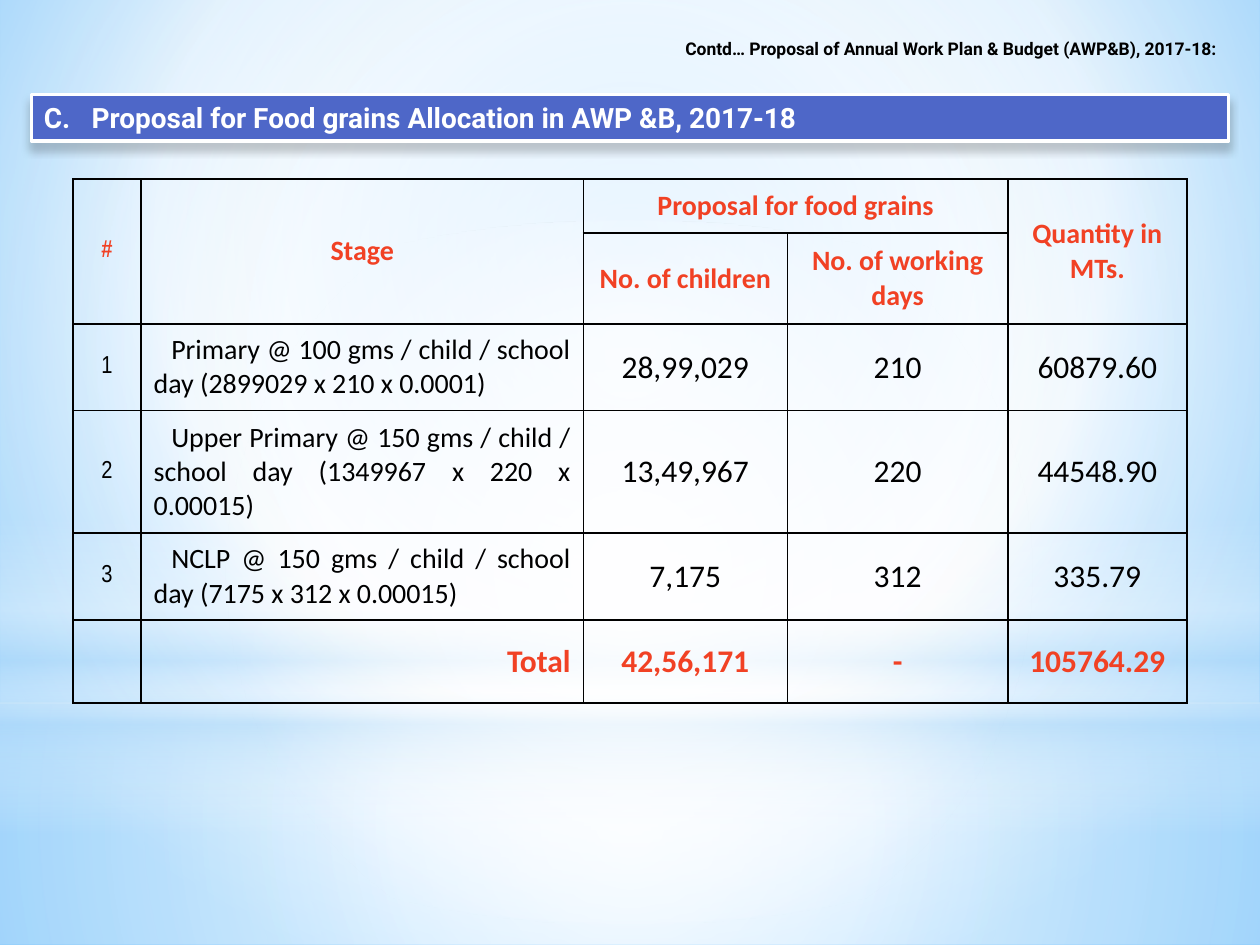
from dataclasses import dataclass

import lxml.etree
import pptx
import pptx.dml.color
import pptx.enum.shapes
import pptx.enum.text
import pptx.oxml.ns
import pptx.util

Inches = pptx.util.Inches
Pt = pptx.util.Pt
RGBColor = pptx.dml.color.RGBColor
Align = pptx.enum.text.PP_ALIGN
Shapes = pptx.enum.shapes.MSO_SHAPE
qn = pptx.oxml.ns.qn

BLACK = RGBColor(0x00, 0x00, 0x00)
WHITE = RGBColor(0xFF, 0xFF, 0xFF)
INDIGO = RGBColor(0x4E, 0x67, 0xC8)
RED = RGBColor(0xF1, 0x41, 0x24)
PALE_BLUE = RGBColor(0xB4, 0xDC, 0xFA)
SKY_BLUE = RGBColor(0x9E, 0xD5, 0xFF)
DEEP_BLUE = RGBColor(0x5B, 0xB9, 0xFF)


@dataclass(frozen=True)
class Stop:
    position: int
    color: RGBColor
    opacity: int = 100


@dataclass(frozen=True)
class Glow:
    shape_type: int
    top: float
    height: float
    stops: tuple
    linear: bool = False


@dataclass(frozen=True)
class TextStyle:
    font: str
    size: int
    color: RGBColor = BLACK
    bold: bool = False
    alignment: int = Align.CENTER
    indent: float = 0


@dataclass(frozen=True)
class Entry:
    row: int
    column: int
    text: str
    style: TextStyle


CONTINUED = TextStyle("Roboto", 10, bold=True, alignment=Align.RIGHT)
HEADING = TextStyle("Roboto", 16, WHITE, True, Align.LEFT)
NUMBER_HEADER = TextStyle("Arial Narrow", 14, RED, True)
HEADER = TextStyle("Calibri", 16, RED, True)
NUMBER = TextStyle("Arial Narrow", 14)
STAGE = TextStyle("Calibri", 16, alignment=Align.JUSTIFY, indent=0.14)
VALUE = TextStyle("Calibri", 18)
TOTAL = TextStyle("Calibri", 18, RED, True)
TOTAL_LABEL = TextStyle("Calibri", 18, RED, True, Align.RIGHT)

CENTER = (50, 50, 50, 50)
BACKGROUND_STOPS = (Stop(0, SKY_BLUE), Stop(60, WHITE), Stop(100, DEEP_BLUE))
GLOWS = (
    Glow(Shapes.RECTANGLE, 5.58, 1.92,
         (Stop(0, WHITE, 91), Stop(37, WHITE, 76), Stop(100, PALE_BLUE, 79))),
    Glow(Shapes.RECTANGLE, 0, 5.58,
         (Stop(0, WHITE, 89), Stop(48, WHITE, 62), Stop(100, PALE_BLUE, 79))),
    Glow(Shapes.RECTANGLE, 4.12, 2.5,
         (Stop(0, WHITE, 0), Stop(29, WHITE, 30), Stop(45, PALE_BLUE, 40),
          Stop(55, WHITE, 26), Stop(65, PALE_BLUE, 60), Stop(100, WHITE, 0)), True),
    Glow(Shapes.OVAL, 1.75, 5.58, (Stop(0, WHITE), Stop(56, WHITE, 0))),
)

COLUMN_WIDTHS = (0.54, 3.51, 1.62, 1.75, 1.42)
ROW_HEIGHTS = (0.43, 0.72, 0.69, 0.97, 0.69, 0.66)
MERGES = ((0, 0, 1, 0), (0, 1, 1, 1), (0, 2, 0, 3), (0, 4, 1, 4))
HEADERS = (
    Entry(0, 0, "#", NUMBER_HEADER),
    Entry(0, 1, "Stage", HEADER),
    Entry(0, 2, "Proposal for food grains", HEADER),
    Entry(0, 4, "Quantity in MTs.", HEADER),
    Entry(1, 2, "No. of children", HEADER),
    Entry(1, 3, "No. of working days", HEADER),
)
ROW_STYLES = (NUMBER, STAGE, VALUE, VALUE, VALUE)
STAGE_ROWS = (
    ("1", "Primary @ 100 gms / child / school day (2899029 x 210 x 0.0001)",
     "28,99,029", "210", "60879.60"),
    ("2", "Upper Primary @ 150 gms / child / school day (1349967 x 220 x 0.00015)",
     "13,49,967", "220", "44548.90"),
    ("3", "NCLP @ 150 gms / child / school day (7175 x 312 x 0.00015)",
     "7,175", "312", "335.79"),
)
TOTALS = (
    Entry(5, 1, "Total", TOTAL_LABEL),
    Entry(5, 2, "42,56,171", TOTAL),
    Entry(5, 3, "-", TOTAL),
    Entry(5, 4, "105764.29", TOTAL),
)


def add_element(parent, tag: str, **attributes):
    values = {name: str(value) for name, value in attributes.items()}
    return lxml.etree.SubElement(parent, qn(tag), values)


def add_color(parent, color: RGBColor, opacity: int = 100) -> None:
    element = add_element(parent, "a:srgbClr", val=color)
    if opacity < 100:
        add_element(element, "a:alpha", val=opacity * 1000)


def set_gradient(owner, stops: tuple, focus: tuple = CENTER, linear: bool = False) -> None:
    gradient = owner.find(".//" + qn("a:gradFill"))
    for child in list(gradient):
        gradient.remove(child)
    stop_list = add_element(gradient, "a:gsLst")
    for stop in stops:
        element = add_element(stop_list, "a:gs", pos=stop.position * 1000)
        add_color(element, stop.color, stop.opacity)
    if linear:
        add_element(gradient, "a:lin", ang=90 * 60000, scaled=0)
    else:
        circle = add_element(gradient, "a:path", path="circle")
        edges = {edge: value * 1000 for edge, value in zip("ltrb", focus)}
        add_element(circle, "a:fillToRect", **edges)


def write_text(text_frame, text: str, style: TextStyle) -> None:
    paragraph = text_frame.paragraphs[0]
    paragraph.text = text
    paragraph.alignment = style.alignment
    if style.indent:
        paragraph._p.get_or_add_pPr().set("indent", str(Inches(style.indent)))
    font = paragraph.font
    font.name = style.font
    font.size = Pt(style.size)
    font.bold = style.bold
    font.color.rgb = style.color


def draw_glow(slide, glow: Glow) -> None:
    shape = slide.shapes.add_shape(
        glow.shape_type, Inches(0), Inches(glow.top), Inches(10), Inches(glow.height))
    shape.shadow.inherit = False
    shape.line.fill.background()
    shape.fill.gradient()
    set_gradient(shape.element, glow.stops, linear=glow.linear)


def draw_heading(slide) -> None:
    shape = slide.shapes.add_shape(
        Shapes.RECTANGLE, Inches(0.25), Inches(0.75), Inches(9.5), Inches(0.37))
    shape.fill.solid()
    shape.fill.fore_color.rgb = INDIGO
    shape.line.color.rgb = WHITE
    shape.line.width = Pt(2)
    shape.shadow.inherit = False
    effects = shape.element.spPr.find(qn("a:effectLst"))
    shadow = add_element(effects, "a:outerShdw", blurRad=Pt(5), dist=Pt(4),
                         dir=90 * 60000, rotWithShape=0)
    add_color(shadow, BLACK, 20)
    shape.text_frame.word_wrap = True
    properties = shape.text_frame.paragraphs[0]._p.get_or_add_pPr()
    properties.set("marL", str(Inches(0.38)))
    properties.set("indent", str(Inches(-0.38)))
    add_element(properties, "a:buAutoNum", type="alphaUcPeriod", startAt=3)
    write_text(shape.text_frame, "Proposal for Food grains Allocation in AWP &B, 2017-18", HEADING)


def format_cell(cell) -> None:
    properties = cell._tc.get_or_add_tcPr()
    for side in ("a:lnL", "a:lnR", "a:lnT", "a:lnB"):
        line = add_element(properties, side, w=Pt(1))
        add_color(add_element(line, "a:solidFill"), BLACK)
    cell.fill.background()
    cell.vertical_anchor = pptx.enum.text.MSO_ANCHOR.MIDDLE


def draw_table(slide) -> None:
    table = slide.shapes.add_table(
        len(ROW_HEIGHTS), len(COLUMN_WIDTHS), Inches(0.58), Inches(1.42),
        Inches(sum(COLUMN_WIDTHS)), Inches(sum(ROW_HEIGHTS))).table
    table.first_row = table.horz_banding = False
    for column, width in zip(table.columns, COLUMN_WIDTHS):
        column.width = Inches(width)
    for row, height in zip(table.rows, ROW_HEIGHTS):
        row.height = Inches(height)
    for cell in table.iter_cells():
        format_cell(cell)
    for top, left, bottom, right in MERGES:
        table.cell(top, left).merge(table.cell(bottom, right))
    stages = [Entry(row, column, text, ROW_STYLES[column])
              for row, texts in enumerate(STAGE_ROWS, start=2)
              for column, text in enumerate(texts)]
    for entry in (*HEADERS, *stages, *TOTALS):
        write_text(table.cell(entry.row, entry.column).text_frame, entry.text, entry.style)


def main() -> None:
    presentation = pptx.Presentation()
    presentation.slide_width = Inches(10)
    presentation.slide_height = Inches(7.5)
    slide = presentation.slides.add_slide(presentation.slide_layouts[6])
    slide.background.fill.gradient()
    set_gradient(slide.element, BACKGROUND_STOPS, (20, 10, 20, 60))
    for glow in GLOWS:
        draw_glow(slide, glow)
    continued = slide.shapes.add_textbox(Inches(0.25), Inches(0.25), Inches(9.5), Inches(0.27))
    continued.text_frame.word_wrap = True
    write_text(continued.text_frame,
               "Contd… Proposal of Annual Work Plan & Budget (AWP&B), 2017-18:", CONTINUED)
    draw_heading(slide)
    draw_table(slide)
    presentation.save("out.pptx")


if __name__ == "__main__":
    main()
